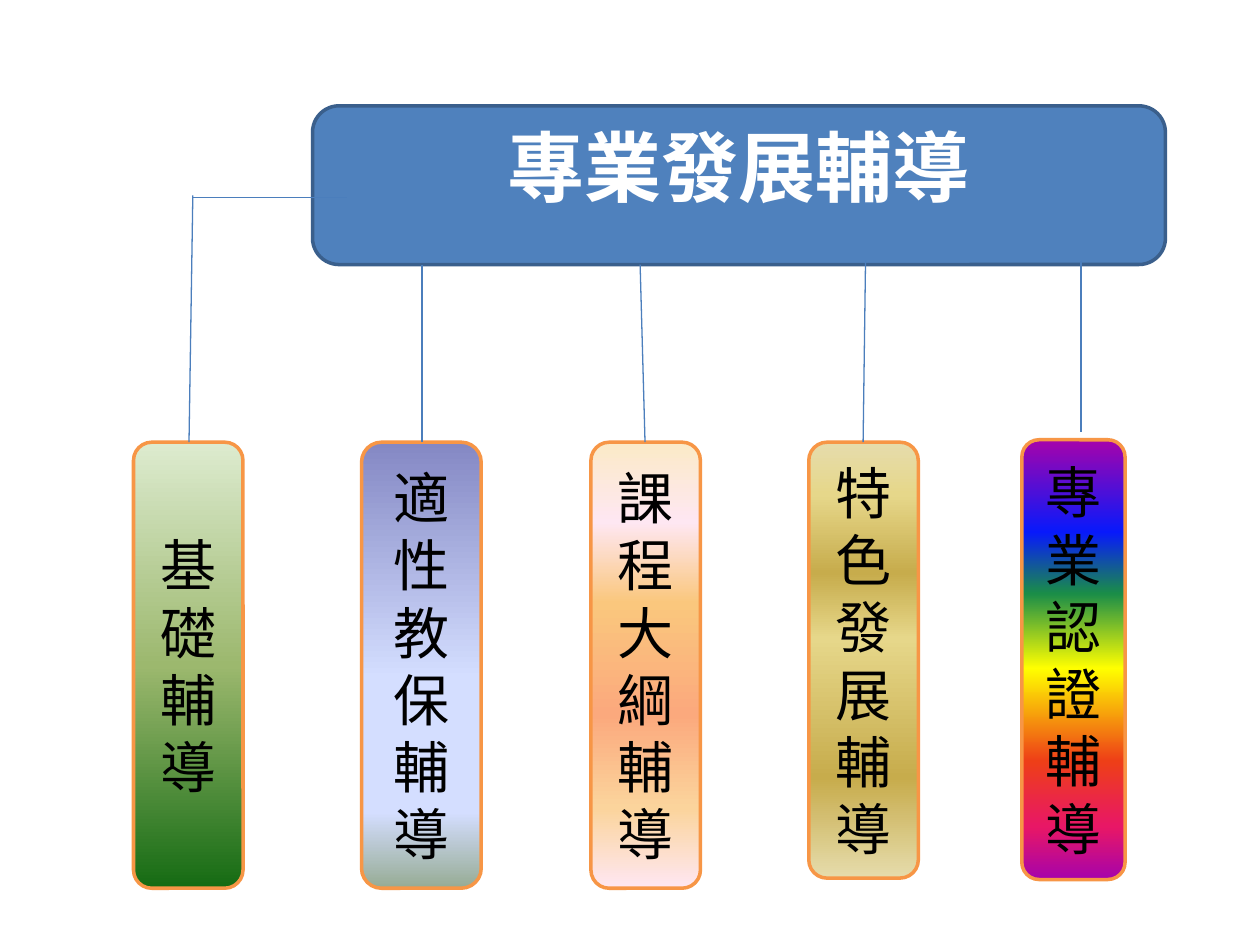
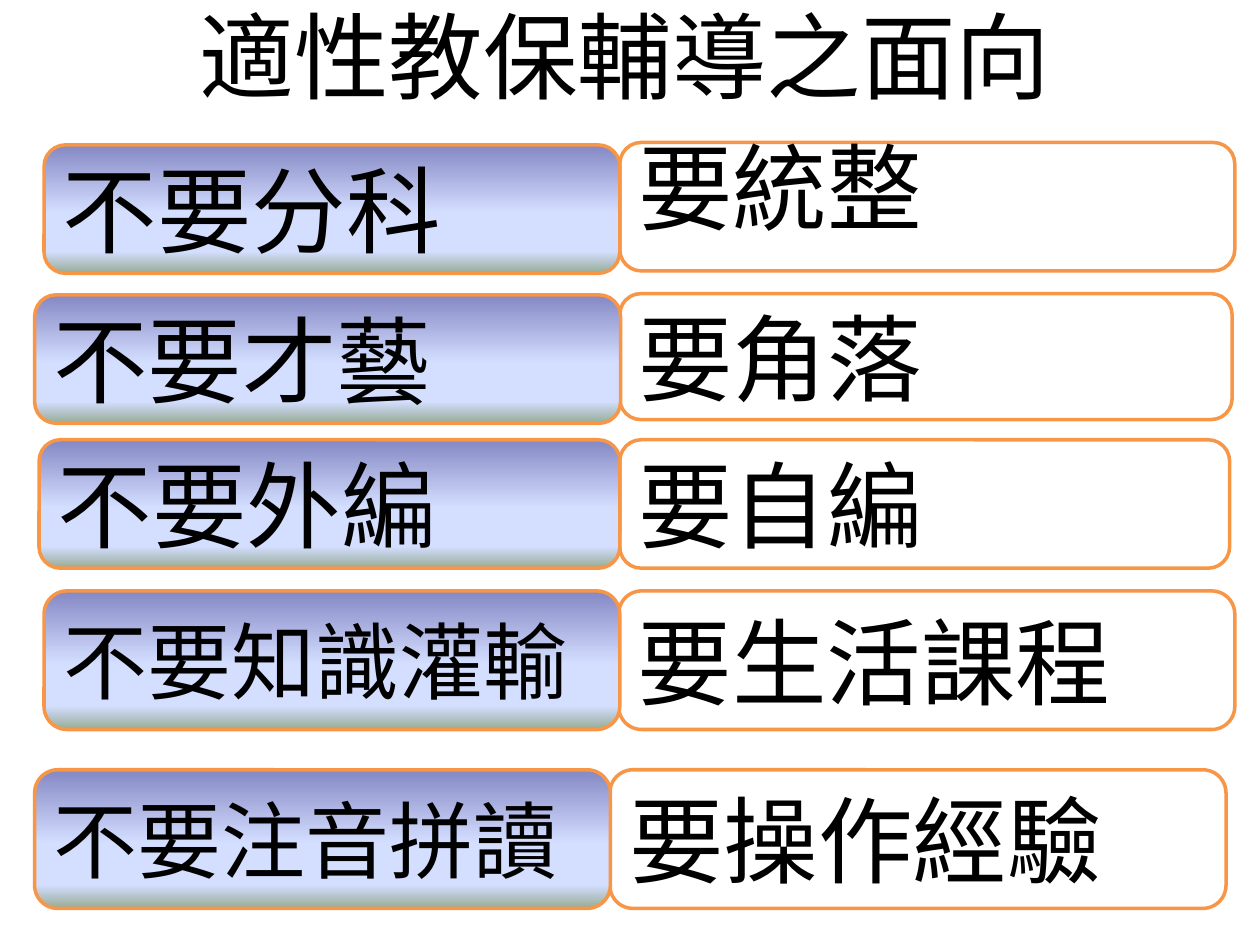
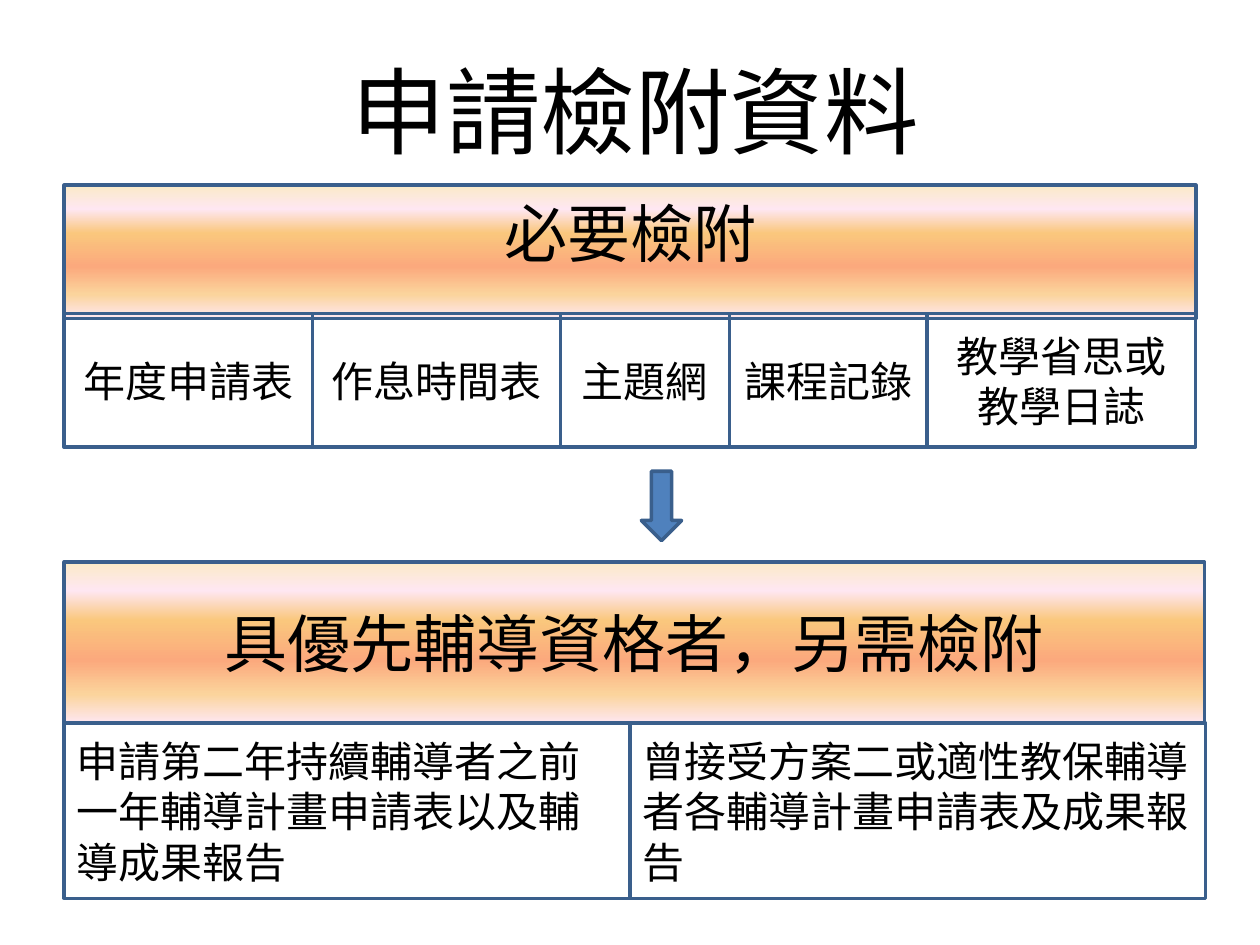
from itertools import accumulate

from lxml import etree
from pptx import Presentation
from pptx.dml.color import RGBColor
from pptx.enum.shapes import MSO_CONNECTOR, MSO_SHAPE
from pptx.enum.text import MSO_ANCHOR, PP_ALIGN
from pptx.oxml.ns import qn
from pptx.util import Pt

ROUNDED = MSO_SHAPE.ROUNDED_RECTANGLE
RECTANGLE = MSO_SHAPE.RECTANGLE
DOWN_ARROW = MSO_SHAPE.DOWN_ARROW
STRAIGHT = MSO_CONNECTOR.STRAIGHT
MIDDLE = MSO_ANCHOR.MIDDLE
LEFT = PP_ALIGN.LEFT
CENTER = PP_ALIGN.CENTER

NOTO = "Noto Sans CJK SC"
CALIBRI = "Calibri"
LINE_RATIO = 1.2

COLORS = {
    "black": "000000",
    "white": "FFFFFF",
    "blue": "4F81BD",
    "navy": "3A5F8C",
    "link": "4B7EBC",
    "orange": "F79646",
}

GRADIENTS = {
    "green": [(0, "DDEBCF"), (50, "9CB86E"), (100, "156B13")],
    "lavender": [(0, "8488C4"), (53, "D4DEFF"), (83, "D4DEFF"), (100, "96AB94")],
    "peach": [(0, "FBEAC7"), (18, "FEE7F2"), (36, "FAC77D"),
              (61, "FBA97D"), (82, "FBD49C"), (100, "FEE7F2")],
    "gold": [(0, "E6DCAC"), (12, "E6D78A"), (30, "C7AC4C"),
             (45, "E6D78A"), (77, "C7AC4C"), (100, "E6DCAC")],
    "rainbow": [(0, "A603AB"), (21, "0819FB"), (35, "1A8D48"), (52, "FFFF00"),
                (73, "EE3F17"), (88, "E81766"), (100, "A603AB")],
}


def rgb(name):
    return RGBColor.from_string(COLORS[name])


def write(shape, text, size, font=NOTO, color="black", bold=False,
          align=CENTER, wraps=False, lift=0):
    frame = shape.text_frame
    frame.word_wrap = True
    frame.vertical_anchor = MIDDLE
    frame.margin_bottom = Pt(3.6 + lift)
    paragraph = frame.paragraphs[0]
    paragraph.alignment = align
    if wraps:
        paragraph.line_spacing = Pt(size * LINE_RATIO)
    run = paragraph.add_run()
    run.text = text
    run.font.size = Pt(size)
    run.font.bold = bold
    run.font.name = font
    run.font.color.rgb = rgb(color)
    etree.SubElement(run.font._element, qn("a:ea"), typeface=font)


def paint(shape, fill):
    if fill is None:
        shape.fill.background()
    elif fill in GRADIENTS:
        shape.fill.gradient()
        shape.fill.gradient_angle = 270
        stops = shape._element.spPr.find(qn("a:gradFill")).find(qn("a:gsLst"))
        for stop in list(stops):
            stops.remove(stop)
        for percent, color in GRADIENTS[fill]:
            stop = etree.SubElement(stops, qn("a:gs"), pos=str(percent * 1000))
            etree.SubElement(stop, qn("a:srgbClr"), val=color)
    else:
        shape.fill.solid()
        shape.fill.fore_color.rgb = rgb(fill)


def add_box(slide, kind, bounds, fill=None, outline="navy"):
    box = slide.shapes.add_shape(kind, *map(Pt, bounds))
    box.shadow.inherit = False
    paint(box, fill)
    box.line.color.rgb = rgb(outline)
    box.line.width = Pt(2)
    return box


def add_link(slide, *ends):
    link = slide.shapes.add_connector(STRAIGHT, *map(Pt, ends))
    link.line.color.rgb = rgb("link")
    link.line.width = Pt(0.75)
    etree.SubElement(link._element.spPr, qn("a:effectLst"))


def add_title(slide, text, left, top):
    title = slide.shapes.add_textbox(Pt(left), Pt(top), Pt(617.8), Pt(62.6))
    write(title, text, 54)


def build_guidance_tree(slide):
    branches = [
        ("適性教保輔導", "lavender", (206.6, 252.7, 68.4, 254.9)),
        ("課程大綱輔導", "peach", (337.7, 252.7, 62.6, 254.9)),
        ("特色發展輔導", "gold", (462.2, 252.7, 62.6, 249.1)),
        ("專業認證輔導", "rainbow", (583.9, 251.3, 59, 251.3)),
        ("基礎輔導", "green", (76.3, 252.7, 62.6, 254.9)),
    ]
    for label, fill, bounds in branches:
        branch = add_box(slide, ROUNDED, bounds, fill, "orange")
        write(branch, label, 32, wraps=True)

    root = add_box(slide, ROUNDED, (178.6, 60.5, 487.4, 90.7), "blue")
    write(root, "專業發展輔導", 44, color="white", bold=True, lift=22)

    for ends in [
        (110.2, 113, 198, 113),
        (110.2, 111.6, 108, 252.7),
        (241.2, 151.2, 241.2, 252.7),
        (365.8, 151.2, 368.6, 252.7),
        (494.6, 149, 493.2, 252.7),
        (617.8, 149, 617.8, 247),
    ]:
        add_link(slide, *ends)


def build_contrasts(slide):
    add_title(slide, "適性教保輔導之面向", 48.2, 0)
    rows = [
        ("不要分科", 54, (25.2, 82.8, 329, 73.4),
         "要統整", (354.2, 81.4, 351.4, 73.4), "white", 24),
        ("不要才藝", 54, (19.8, 168.5, 334.8, 73.4),
         "要角落", (354.2, 167.8, 349.9, 72), None, 0),
        ("不要外編", 54, (22.3, 251.3, 331.9, 73.4),
         "要自編", (354.2, 251.3, 348.5, 73.4), None, 0),
        ("不要知識灌輸", 48, (25.2, 337.7, 329, 79.2),
         "要生活課程", (353.5, 337.7, 352.1, 79.2), None, 0),
        ("不要注音拼讀", 48, (19.8, 439.9, 329, 79.2),
         "要操作經驗", (348.5, 439.9, 352.1, 79.2), None, 0),
    ]
    for avoid, avoid_size, avoid_bounds, do, do_bounds, do_fill, lift in rows:
        do_box = add_box(slide, ROUNDED, do_bounds, do_fill, "orange")
        write(do_box, do, 54, align=LEFT, lift=lift)
        avoid_box = add_box(slide, ROUNDED, avoid_bounds, "lavender", "orange")
        write(avoid_box, avoid, avoid_size, align=LEFT)


def add_checklist(slide, heading, bounds, items, top, height, align, lift=0):
    header = add_box(slide, RECTANGLE, bounds, "peach")
    write(header, heading, 36, font=CALIBRI, lift=lift)
    lefts = accumulate((width for _, width in items), initial=bounds[0])
    for left, (label, width) in zip(lefts, items):
        item = add_box(slide, RECTANGLE, (left, top, width, height))
        write(item, label, 24, font=CALIBRI, align=align, wraps=True)


def build_attachments(slide):
    add_title(slide, "申請檢附資料", 54, 31.7)
    add_box(slide, DOWN_ARROW, (366.5, 269.3, 23, 39.6), "blue")
    required = [
        ("年度申請表", 141.8),
        ("作息時間表", 141.8),
        ("主題網", 96.5),
        ("課程記錄", 113),
        ("教學省思或教學日誌", 153.4),
    ]
    add_checklist(slide, "必要檢附", (36.7, 105.8, 646.6, 76.3),
                  required, 179.3, 76.3, CENTER, lift=22)
    priority = [
        ("申請第二年持續輔導者之前一年輔導計畫申請表以及輔導成果報告", 323.3),
        ("曾接受方案二或適性教保輔導者各輔導計畫申請表及成果報告", 329),
    ]
    add_checklist(slide, "具優先輔導資格者，另需檢附", (36.7, 321.1, 651.6, 92.2),
                  priority, 413.3, 100.1, LEFT)


def main():
    deck = Presentation()
    deck.slide_width = Pt(720)
    deck.slide_height = Pt(540)
    blank = deck.slide_layouts[6]
    for build in (build_guidance_tree, build_contrasts, build_attachments):
        build(deck.slides.add_slide(blank))
    deck.save("out.pptx")


if __name__ == "__main__":
    main()
